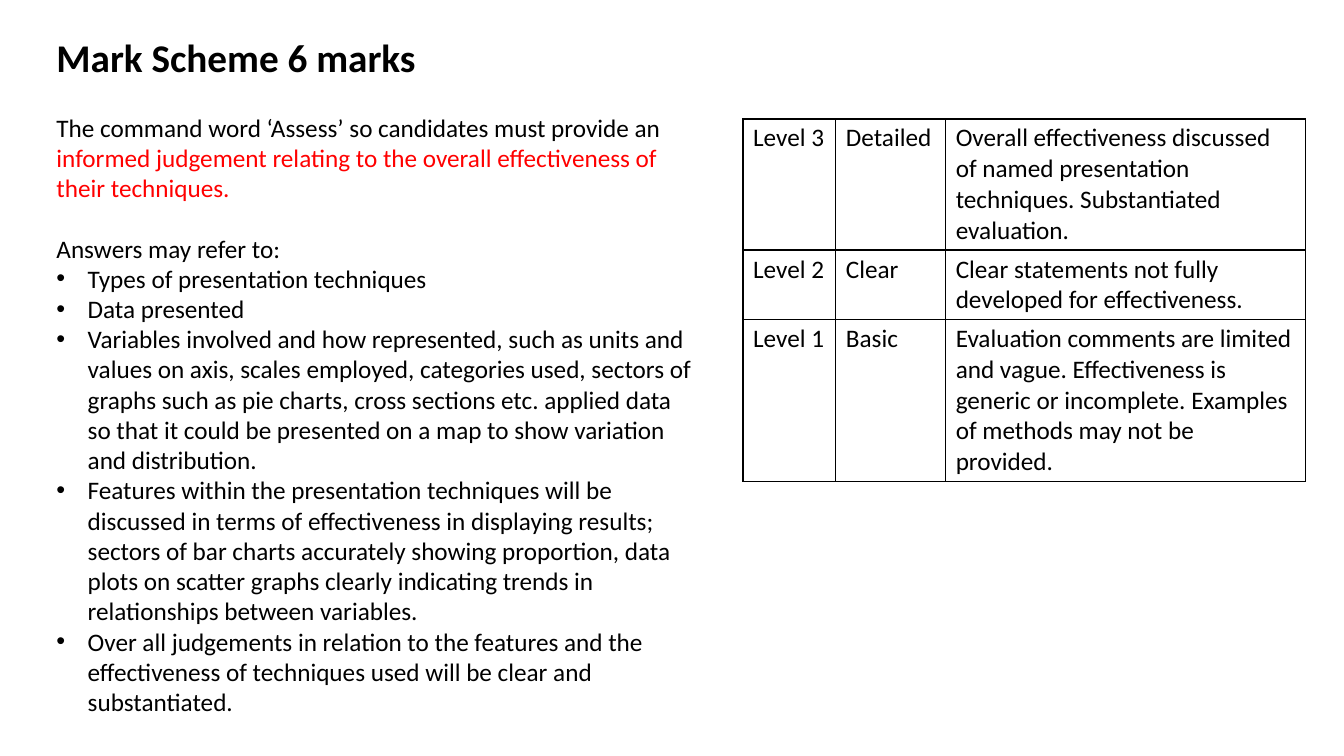
from dataclasses import dataclass

from pptx import Presentation
from pptx.dml.color import RGBColor as Rgb
from pptx.enum.text import MSO_ANCHOR as Anchor, MSO_AUTO_SIZE as Fit, PP_ALIGN as Align
from pptx.oxml import parse_xml
from pptx.oxml.ns import nsdecls
from pptx.util import Inches, Pt

COLORS = {"ink": "000000", "key": "FF0000", "paper": "FFFFFF"}
FONT = "Calibri"
INDENT = 0.31


@dataclass(frozen=True)
class Run:
    """A stretch of text in one colour."""
    text: str
    color: str = "ink"


@dataclass(frozen=True)
class Para:
    """A body paragraph with its bullet and the gap above it."""
    runs: tuple[Run, ...]
    bullet: bool = True
    gap: float = 0


@dataclass(frozen=True)
class Level:
    """A row of the mark scheme."""
    name: str
    grade: str
    detail: str
    height: float


TITLE = Para((Run("Mark Scheme 6 marks"),), bullet=False)
POINTS = (
    "Types of presentation techniques",
    "Data presented",
    "Variables involved and how represented, such as units and values on axis, "
    "scales employed, categories used, sectors of graphs such as pie charts, "
    "cross sections etc. applied data so that it could be presented on a map "
    "to show variation and distribution.",
    "Features within the presentation techniques will be discussed in terms of "
    "effectiveness in displaying results; sectors of bar charts accurately "
    "showing proportion, data plots on scatter graphs clearly indicating trends "
    "in relationships between variables.",
    "Over all judgements in relation to the features and the effectiveness of "
    "techniques used will be clear and substantiated.",
)
BODY = (
    Para((
        Run("The command word ‘Assess’ so candidates must provide an "),
        Run("informed judgement relating to the overall effectiveness of "
            "their techniques.", "key"),
    ), bullet=False),
    Para((Run("Answers may refer to:"),), bullet=False, gap=21.6),
    *(Para((Run(point),)) for point in POINTS),
)
LEVELS = (
    Level("Level 3", "Detailed", "Overall effectiveness discussed of named "
          "presentation techniques. Substantiated evaluation.", 1.3),
    Level("Level 2", "Clear", "Clear statements not fully developed for "
          "effectiveness.", 0.69),
    Level("Level 1", "Basic", "Evaluation comments are limited and vague. "
          "Effectiveness is generic or incomplete. Examples of methods may "
          "not be provided.", 1.61),
)
WIDTHS = (0.92, 1.09, 3.57)


def tint(name: str) -> Rgb:
    """Return a named colour."""
    return Rgb.from_string(COLORS[name])


def style(para, size: float, bold: bool = False) -> None:
    """Set the font and alignment of a paragraph."""
    font = para.font
    font.name, font.size, font.bold = FONT, Pt(size), bold
    font.color.rgb = tint("ink")
    para.alignment = Align.LEFT


def mark(para, bullet: bool) -> None:
    """Turn the bullet of a paragraph on or off."""
    props = para._p.get_or_add_pPr()
    step = Inches(INDENT) if bullet else 0
    props.set("marL", str(step))
    props.set("indent", str(-step))
    tags = ('<a:buFont {} typeface="Arial"/>', '<a:buChar {} char="•"/>') if bullet else ("<a:buNone {}/>",)
    for spot, tag in enumerate(tags):
        node = parse_xml(tag.format(nsdecls("a")))
        props.insert_element_before(node, *("a:buChar", "a:tabLst", "a:defRPr", "a:extLst"))


def write(shape, box: tuple[float, ...], paras: tuple[Para, ...], size: float, bold: bool = False) -> None:
    """Place a text placeholder and fill it."""
    shape.left, shape.top, shape.width, shape.height = map(Inches, box)
    frame = shape.text_frame
    frame.word_wrap = True
    frame.auto_size = Fit.NONE
    frame.vertical_anchor = Anchor.TOP
    for spot, item in enumerate(paras):
        para = frame.add_paragraph() if spot else frame.paragraphs[0]
        para.space_before = Pt(item.gap)
        mark(para, item.bullet)
        style(para, size, bold)
        for part in item.runs:
            run = para.add_run()
            run.text = part.text
            if part.color != "ink":
                run.font.color.rgb = tint(part.color)


def edge(cell) -> None:
    """Draw the four borders of a cell."""
    props = cell._tc.get_or_add_tcPr()
    for spot, side in enumerate(("lnL", "lnR", "lnT", "lnB")):
        props.insert(spot, parse_xml(
            f'<a:{side} {nsdecls("a")} w="{Pt(1)}"><a:solidFill>'
            f'<a:srgbClr val="{COLORS["ink"]}"/></a:solidFill></a:{side}>'))


def chart_marks(slide) -> None:
    """Add the table of levels."""
    high = sum(level.height for level in LEVELS)
    frame = slide.shapes.add_table(
        len(LEVELS), len(WIDTHS), Inches(7.37), Inches(1.18), Inches(sum(WIDTHS)), Inches(high))
    table = frame.table
    table.first_row = table.horz_banding = False
    for column, width in zip(table.columns, WIDTHS):
        column.width = Inches(width)
    for row, level in zip(table.rows, LEVELS):
        row.height = Inches(level.height)
        for cell, text in zip(row.cells, (level.name, level.grade, level.detail)):
            cell.text = text
            cell.margin_top = cell.margin_bottom = Inches(0.04)
            cell.fill.solid()
            cell.fill.fore_color.rgb = tint("paper")
            style(cell.text_frame.paragraphs[0], 18)
            edge(cell)


def main() -> None:
    """Build and save the slide."""
    deck = Presentation()
    deck.slide_width, deck.slide_height = Inches(13.33), Inches(7.5)
    slide = deck.slides.add_slide(deck.slide_layouts[1])
    title, body = slide.placeholders
    write(title, (0.46, 0.28, 6.53, 0.6), (TITLE,), 28, True)
    write(body, (0.46, 1.06, 6.53, 6.15), BODY, 18)
    chart_marks(slide)
    deck.save("out.pptx")


if __name__ == "__main__":
    main()
